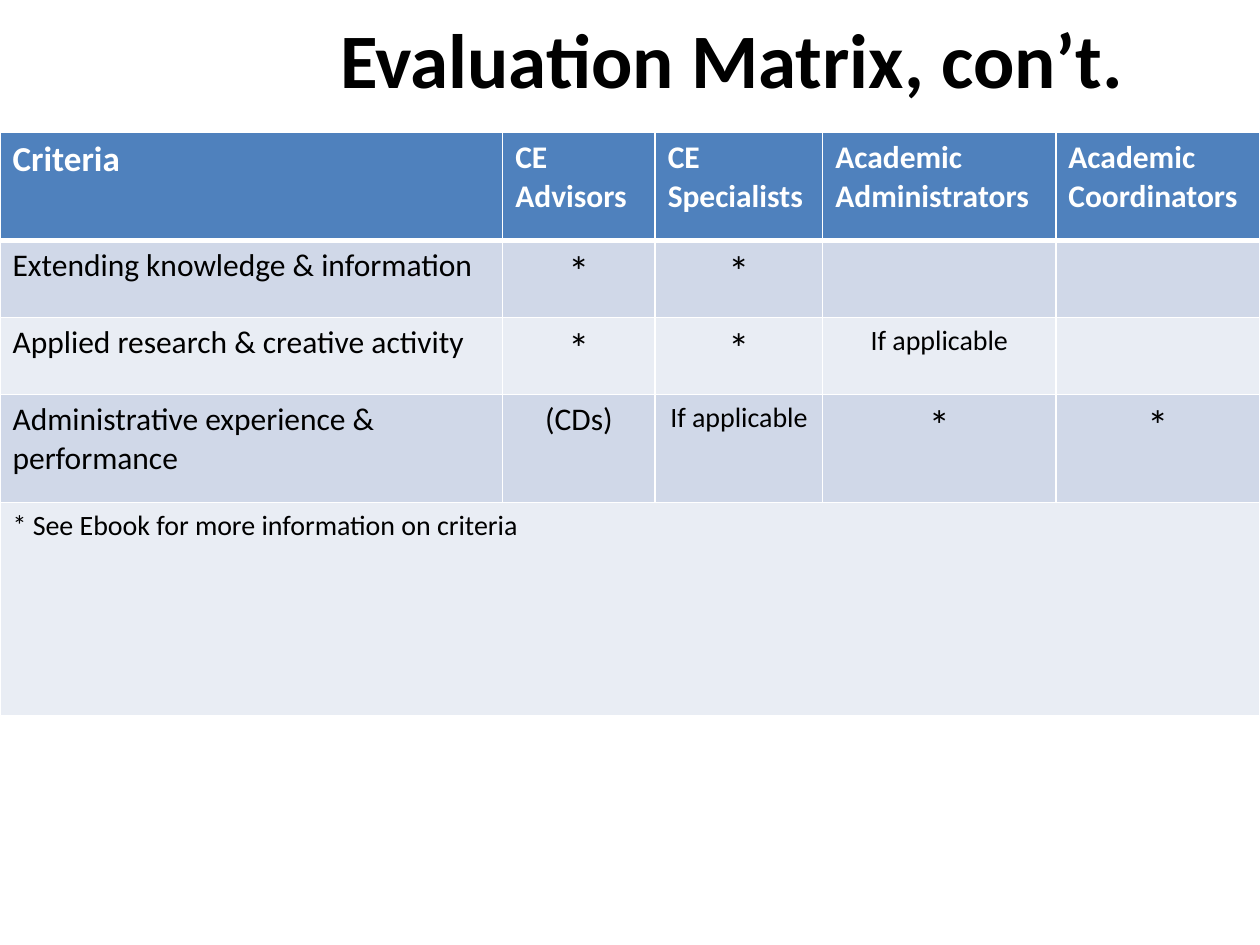
"""Build the evaluation matrix slide."""
import pptx
import pptx.dml.color
import pptx.enum.text
import pptx.oxml
import pptx.oxml.ns
import pptx.util
from pptx.util import Inches

RGBColor = pptx.dml.color.RGBColor
BLACK = RGBColor(0x00, 0x00, 0x00)
WHITE = RGBColor(0xFF, 0xFF, 0xFF)
HEADER_BLUE = RGBColor(0x4F, 0x81, 0xBD)
BAND_DARK = RGBColor(0xD0, 0xD8, 0xE8)
BAND_LIGHT = RGBColor(0xE9, 0xED, 0xF4)

LEFT = pptx.enum.text.PP_ALIGN.LEFT
CENTER = pptx.enum.text.PP_ALIGN.CENTER

COLUMN_WIDTHS = [3.99, 1.21, 1.33, 1.85, 1.62]
ROW_HEIGHTS = [0.86, 0.61, 0.61, 0.86, 1.69]
ROWS = [
    ["Criteria", "CE Advisors", "CE Specialists", "Academic Administrators", "Academic Coordinators"],
    ["Extending knowledge & information", "*", "*", "", ""],
    ["Applied research & creative activity", "*", "*", "If applicable", ""],
    ["Administrative experience & performance", "(CDs)", "If applicable", "*", "*"],
    ["* See Ebook for more information on criteria", "", "", "", ""],
]
TEXT_SIZES = {"Criteria": 20, "*": 24, "If applicable": 16, ROWS[-1][0]: 16}


def write_text(text_frame, text, size=18, color=BLACK, bold=False, alignment=LEFT):
    paragraph = text_frame.paragraphs[0]
    paragraph.alignment = alignment
    paragraph.font.size = pptx.util.Pt(size)
    if text:
        run = paragraph.add_run()
        run.text = text
        run.font.name = "Calibri"
        run.font.size = pptx.util.Pt(size)
        run.font.bold = bold
        run.font.color.rgb = color


def set_borders(cell, top=1, bottom=1):
    properties = cell._tc.get_or_add_tcPr()
    for side, width in (("L", 1), ("R", 1), ("T", top), ("B", bottom)):
        properties.append(pptx.oxml.parse_xml(
            f'<a:ln{side} {pptx.oxml.ns.nsdecls("a")} w="{pptx.util.Pt(width)}">'
            f'<a:solidFill><a:srgbClr val="{WHITE}"/></a:solidFill></a:ln{side}>'))


def add_title(slide, text):
    shape = slide.shapes.add_textbox(Inches(2.6), Inches(0.04), Inches(7.29), Inches(0.84))
    shape.text_frame.word_wrap = True
    shape.text_frame.auto_size = pptx.enum.text.MSO_AUTO_SIZE.SHAPE_TO_FIT_TEXT
    write_text(shape.text_frame, text, size=44, bold=True)


def fill_cell(cell, text, row, column):
    header = row == 0
    set_borders(cell, top=3 if row == 1 else 1, bottom=3 if header else 1)
    cell.fill.solid()
    cell.fill.fore_color.rgb = HEADER_BLUE if header else (BAND_LIGHT, BAND_DARK)[row % 2]
    write_text(cell.text_frame, text, size=TEXT_SIZES.get(text, 18),
               color=WHITE if header else BLACK, bold=header,
               alignment=LEFT if header or column == 0 else CENTER)


def add_matrix(slide):
    table = slide.shapes.add_table(
        len(ROWS), len(COLUMN_WIDTHS), Inches(0), Inches(1.05),
        Inches(sum(COLUMN_WIDTHS)), Inches(sum(ROW_HEIGHTS))).table
    for column, width in zip(table.columns, COLUMN_WIDTHS):
        column.width = Inches(width)
    for row, height in zip(table.rows, ROW_HEIGHTS):
        row.height = Inches(height)
    for row_index, texts in enumerate(ROWS):
        for column_index, text in enumerate(texts):
            fill_cell(table.cell(row_index, column_index), text, row_index, column_index)
    last_row = len(ROWS) - 1
    table.cell(last_row, 0).merge(table.cell(last_row, len(COLUMN_WIDTHS) - 1))


def main():
    presentation = pptx.Presentation()
    presentation.slide_width = Inches(10)
    presentation.slide_height = Inches(7.5)
    slide = presentation.slides.add_slide(presentation.slide_layouts[6])
    add_title(slide, "Evaluation Matrix, con’t.")
    add_matrix(slide)
    presentation.save("out.pptx")


if __name__ == "__main__":
    main()
